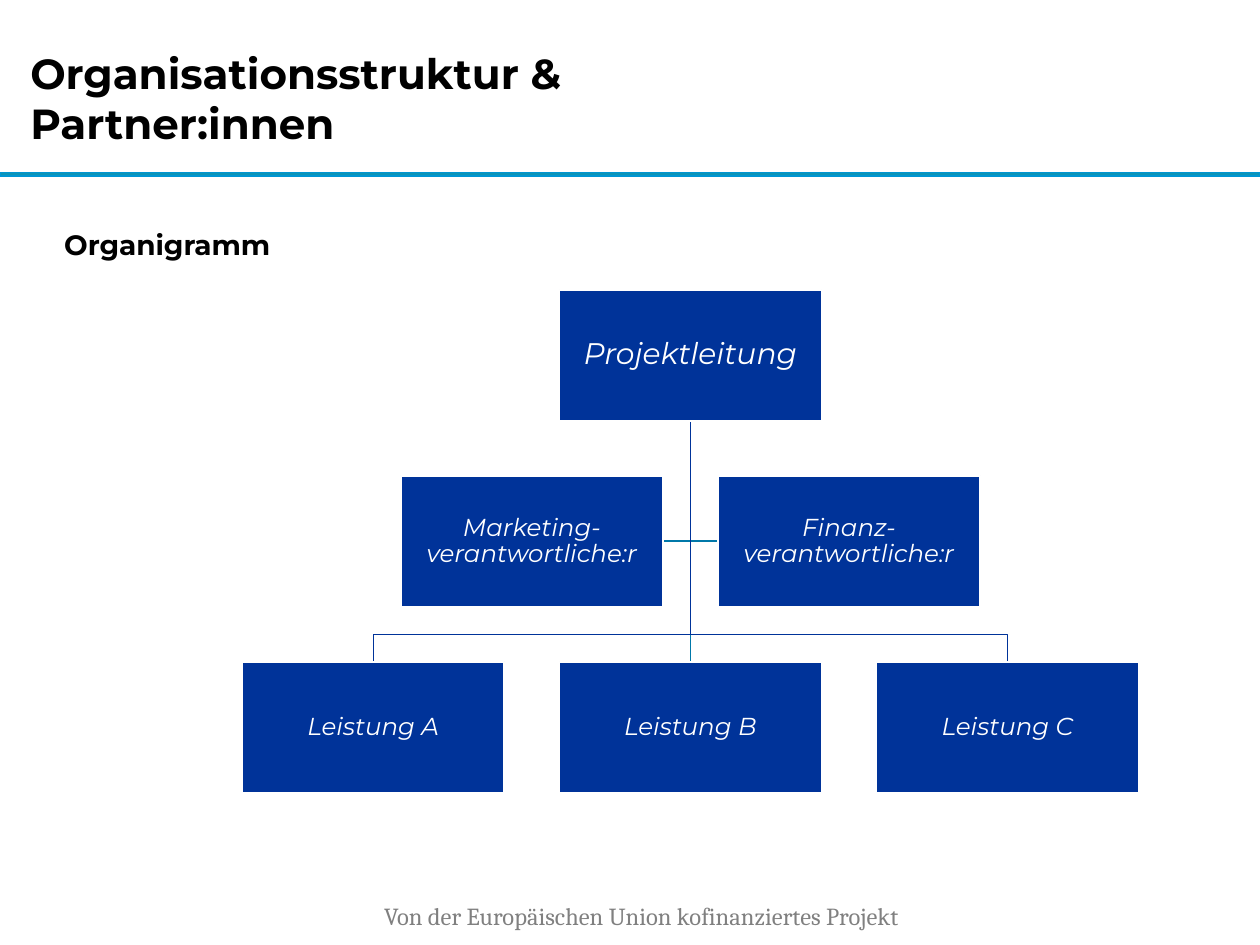
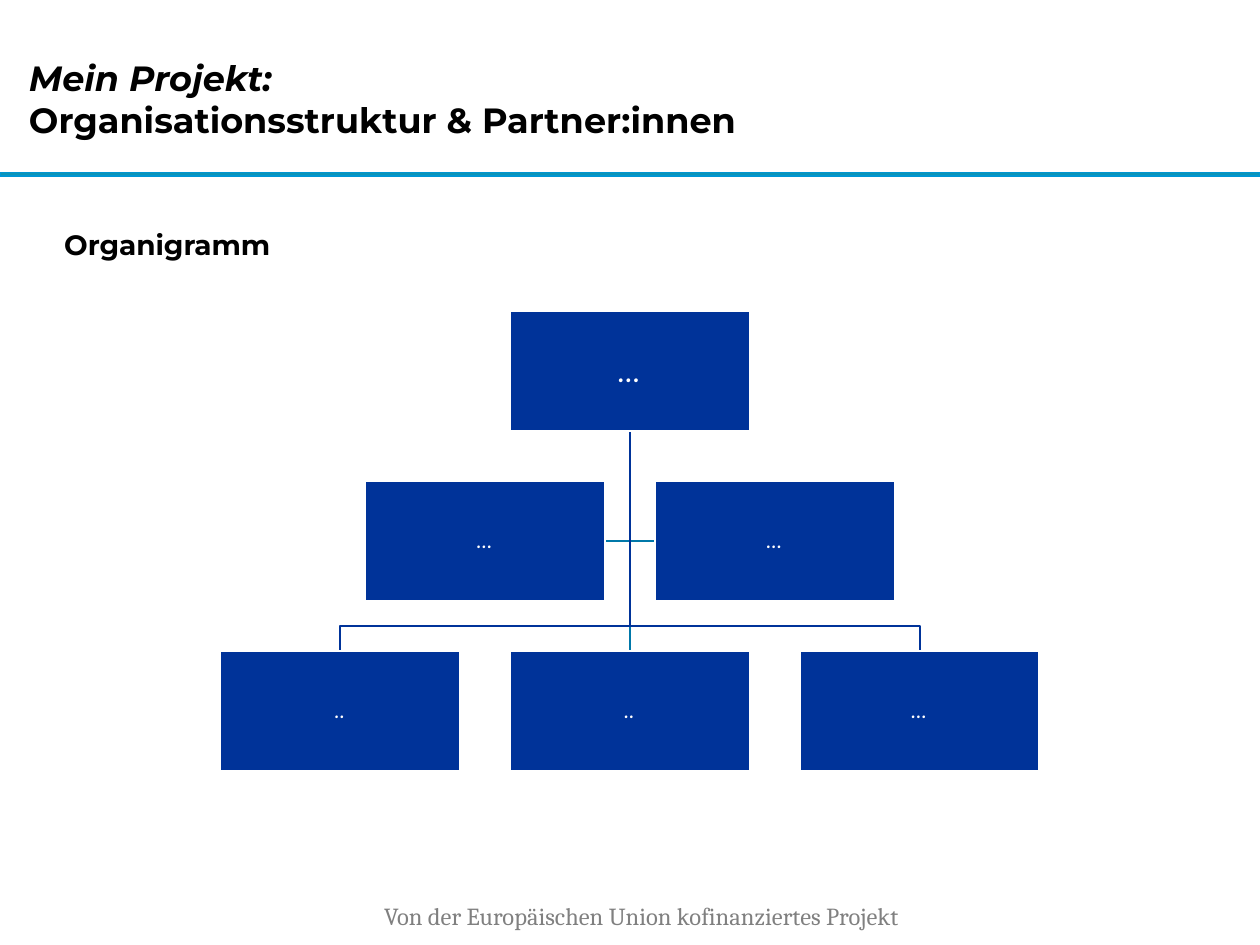
from pptx import Presentation
from pptx.dml.color import RGBColor
from pptx.enum.shapes import MSO_CONNECTOR, MSO_SHAPE
from pptx.enum.text import MSO_ANCHOR, MSO_AUTO_SIZE, PP_ALIGN
from pptx.oxml.ns import qn
from pptx.util import Inches, Pt
from lxml.etree import SubElement

NAVY = RGBColor(0x00, 0x33, 0x99)
TEAL = RGBColor(0x00, 0x78, 0xA9)
BAND_FILL = RGBColor(0x0C, 0x94, 0xB7)
BAND_LINE = RGBColor(0x00, 0x96, 0xD3)
GREY = RGBColor(0x80, 0x80, 0x80)
BLACK = RGBColor(0, 0, 0)
WHITE = RGBColor(0xFF, 0xFF, 0xFF)

TITLE_FONT = {"name": "Montserrat", "bold": True}
HEADING_FONT = {"name": "Montserrat", "size": Pt(16), "bold": True}
FOOTER_FONT = {"name": "Cambria", "size": Pt(14)}
BOX_FONT = {"name": "Montserrat", "italic": True}
TITLE_FRAME = {"margin_left": 0, "margin_right": 0, "margin_top": 0, "margin_bottom": 0,
               "vertical_anchor": MSO_ANCHOR.MIDDLE, "word_wrap": True,
               "auto_size": MSO_AUTO_SIZE.NONE}
HEADING_FRAME = {"margin_left": 0, "margin_right": 0, "word_wrap": True}
BOX_FRAME = {"margin_left": Inches(0.01), "margin_right": Inches(0.01),
             "margin_top": Inches(0.01), "margin_bottom": Inches(0.01),
             "vertical_anchor": MSO_ANCHOR.MIDDLE, "word_wrap": True}

# Labels run: lead, two assistants, three services
PAGES = [
    {"title": [("Organisationsstruktur & ", False), ("Partner:innen", False)],
     "title_size": 24, "title_at": (0.24, 0.18, 7.54, 1.19),
     "center": 5.48, "top": 2.3, "box_width": 2.08, "lead_size": 17,
     "labels": ["Projektleitung", "Marketing- verantwortliche:r", "Finanz-\nverantwortliche:r",
                "Leistung A", "Leistung B", "Leistung C"]},
    {"title": [("Mein Projekt: ", True), ("Organisationsstruktur & Partner:innen", False)],
     "title_size": 20, "title_at": (0.23, 0.19, 7.27, 1.19),
     "center": 5, "top": 2.47, "box_width": 1.9, "lead_size": 20,
     "labels": ["…", "…", "…", "..", "..", "…"]},
]
# Column (in pitches from the center) and row of each box
BOX_GRID = [(0, 0), (-0.5, 1), (0.5, 1), (-1, 2), (0, 2), (1, 2)]


def set_format(target, values, color=None):
    for name, value in values.items():
        setattr(target, name, value)
    if color is not None:
        target.color.rgb = color


def add_bent_line(page, points, color):
    (start_x, start_y), *rest = [(Inches(x), Inches(y)) for x, y in points]
    builder = page.shapes.build_freeform(start_x, start_y)
    builder.add_line_segments(rest, close=False)
    line = builder.convert_to_shape()
    line.shadow.inherit = False
    line.fill.background()
    set_format(line.line, {"width": Pt(1)}, color)


deck = Presentation()
deck.slide_width, deck.slide_height = Inches(10), Inches(7.5)

for content in PAGES:
    page = deck.slides.add_slide(deck.slide_layouts[5])

    # Band under the title
    band = page.shapes.add_shape(MSO_SHAPE.RECTANGLE, 0, Inches(1.37), Inches(10), Inches(0.03))
    band.shadow.inherit = False
    band.fill.solid()
    band.fill.fore_color.rgb = BAND_FILL
    set_format(band.line, {"width": Pt(1)}, BAND_LINE)

    # Title
    title = page.shapes.title
    title.left, title.top, title.width, title.height = map(Inches, content["title_at"])
    set_format(title.text_frame, TITLE_FRAME)
    para = title.text_frame.paragraphs[0]
    para.alignment = PP_ALIGN.LEFT
    for index, (text, italic) in enumerate(content["title"]):
        if index:
            para.add_line_break()
        span = para.add_run()
        span.text = text
        set_format(span.font, TITLE_FONT | {"size": Pt(content["title_size"]), "italic": italic}, BLACK)

    # Footer and heading
    for text, place, frame, font, color in [
        ("Von der Europäischen Union kofinanziertes Projekt", (2.95, 7.1, 4.69, 0.34),
         {"word_wrap": True}, FOOTER_FONT, GREY),
        ("Organigramm", (0.51, 1.76, 8.49, 0.4), HEADING_FRAME, HEADING_FONT, BLACK),
    ]:
        text_box = page.shapes.add_textbox(*map(Inches, place))
        set_format(text_box.text_frame, frame)
        text_box.text_frame.text = text
        set_format(text_box.text_frame.paragraphs[0].font, font, color)

    # Boxes of the chart: half as high as wide, with equal gaps both ways
    center, top, width = content["center"], content["top"], content["box_width"]
    height, gap = width / 2, width * 0.21
    column_pitch, row_pitch = width + gap, height + gap
    boxes = []
    for label, (column, row) in zip(content["labels"], BOX_GRID):
        left = center + column * column_pitch - width / 2
        box = page.shapes.add_shape(MSO_SHAPE.RECTANGLE, Inches(left), Inches(top + row * row_pitch),
                                    Inches(width), Inches(height))
        box.shadow.inherit = False
        box.fill.solid()
        box.fill.fore_color.rgb = NAVY
        set_format(box.line, {"width": Pt(1)}, WHITE)
        set_format(box.text_frame, BOX_FRAME)
        box.text_frame.text = label
        size = 14 if row else content["lead_size"]
        for para in box.text_frame.paragraphs:
            set_format(para, {"alignment": PP_ALIGN.CENTER, "line_spacing": 0.9})
            set_format(para.font, BOX_FONT | {"size": Pt(size)}, WHITE)
        boxes.append(box)

    # Lines from the lead to the assistants and to the middle service
    lead_bottom = top + height
    assistant_middle = top + row_pitch + height / 2
    service_top = top + 2 * row_pitch
    branch = service_top - gap / 2
    for side in (1, -1):
        add_bent_line(page, [(center, lead_bottom), (center, assistant_middle),
                             (center + side * gap / 2, assistant_middle)], TEAL)
    link = page.shapes.add_connector(MSO_CONNECTOR.STRAIGHT, 0, 0, 0, 0)
    link.begin_connect(boxes[0], 2)
    link.end_connect(boxes[4], 0)
    set_format(link.line, {"width": Pt(1)}, TEAL)
    SubElement(link.element.spPr, qn("a:effectLst"))

    # Lines to the outer services
    for side in (1, -1):
        outer = center + side * column_pitch
        add_bent_line(page, [(center, lead_bottom), (center, branch),
                             (outer, branch), (outer, service_top)], NAVY)

    # Boxes lie in front of the lines
    for box in boxes:
        page.shapes.element.append(box.element)

deck.save("out.pptx")
